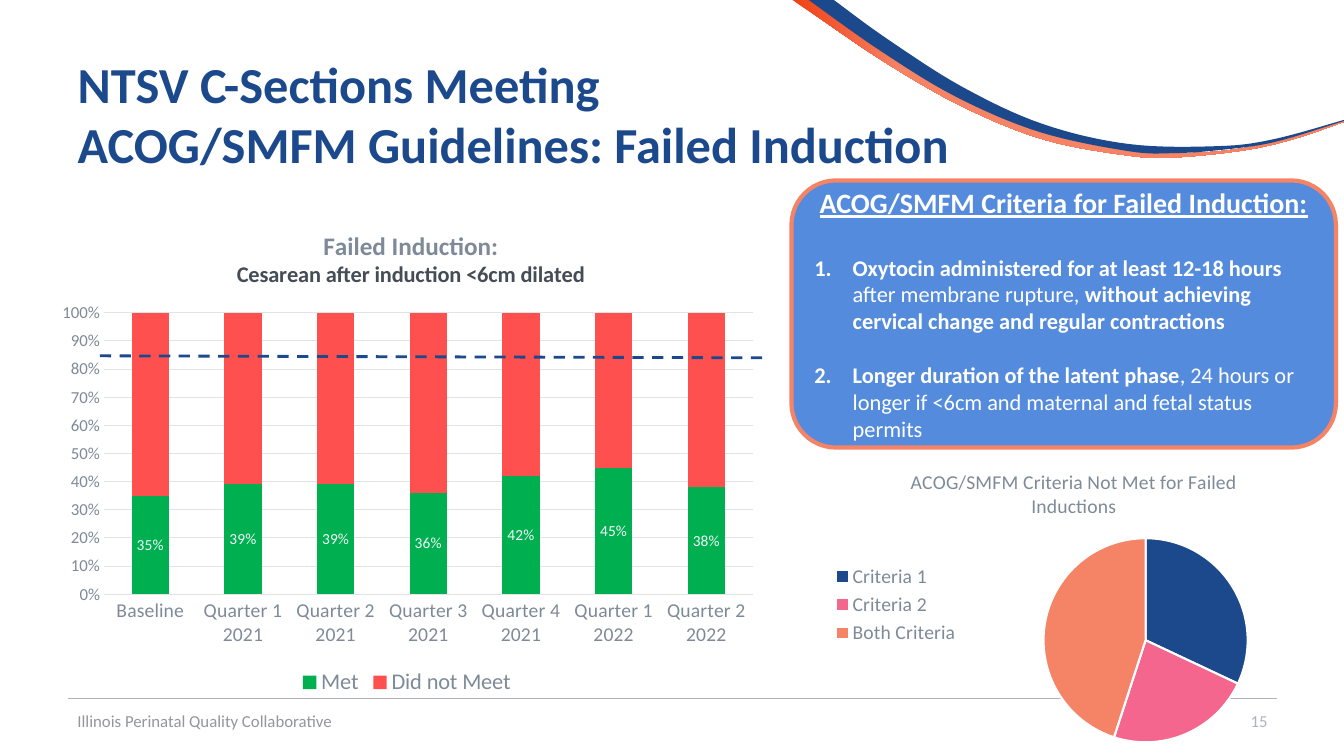
"""Build the failed induction guideline slide."""
from dataclasses import dataclass
from typing import Any, NamedTuple, Optional

from lxml import etree
from pptx import Presentation
from pptx import util as u
from pptx.chart import data as chart_data
from pptx.dml.color import RGBColor
from pptx.enum import chart as ch, dml, shapes, text
from pptx.oxml import ns


@dataclass(frozen=True)
class Theme:
    """Colours and type sizes of the slide."""
    font: str = "Calibri"
    navy: str = "1C498B"
    coral: str = "F58366"
    flame: str = "F04115"
    pink: str = "F5668F"
    card: str = "548BDC"
    green: str = "00B050"
    red: str = "FF5050"
    white: str = "FFFFFF"
    label: str = "F3F6FB"
    dark: str = "444C55"
    grey: str = "7E8A98"
    grid: str = "E1E4E7"
    rule: str = "AFB3B9"
    footer: str = "949699"
    title: int = 36
    heading: int = 20
    chart_title: int = 18
    body: int = 16
    axis: int = 14
    small: int = 12
    data: int = 11


THEME = Theme()


class Style(NamedTuple):
    """Format of a piece of text."""
    size: int
    color: str
    bold: bool = False
    underline: bool = False


class Box(NamedTuple):
    """Left, top, width and height in inches."""
    left: float
    top: float
    width: float
    height: float


class Ribbon(NamedTuple):
    """Outline of a swoosh as knots of its upper and lower edge."""
    upper: list[tuple[float, float]]
    lower: list[tuple[float, float]]
    stops: list[tuple[float, str]]


class Rule(NamedTuple):
    """Straight line between two points."""
    start: tuple[float, float]
    end: tuple[float, float]
    color: str
    width: float
    dash: Optional[dml.MSO_LINE]


class Note(NamedTuple):
    """Small text at the foot of the slide."""
    box: Box
    words: str
    color: str
    align: text.PP_ALIGN


class Paragraph(NamedTuple):
    """Runs of a card paragraph, each with its boldness."""
    runs: list[tuple[str, bool]]
    space_before: float


RIBBONS = [
    Ribbon([(8.05, 0), (8.82, .54), (9.58, .99), (10.39, 1.33), (11.25, 1.5), (11.79, 1.52),
            (12.34, 1.47), (12.83, 1.36), (13.33, 1.2)],
           [(13.33, 1.21), (12.83, 1.38), (12.35, 1.49), (11.69, 1.56), (11.24, 1.55),
            (10.37, 1.39), (9.55, 1.06), (8.78, .62), (8.04, .12), (7.86, 0)],
           [(0, THEME.flame), (.2, THEME.coral)]),
    Ribbon([(8.27, 0), (8.79, .38), (9.54, .86), (10.34, 1.23), (11.2, 1.43), (12.09, 1.45),
            (12.64, 1.38), (13.33, 1.19)],
           [(13.33, 1.2), (12.64, 1.41), (12.09, 1.49), (11.64, 1.52), (11.19, 1.5),
            (10.31, 1.31), (9.48, .96), (8.71, .49), (8.02, 0)],
           [(0, THEME.navy)]),
]
FOOTER_RULE = Rule((.67, 6.93), (12.67, 6.93), THEME.rule, .5, None)
GOAL_RULE = Rule((.99, 3.53), (7.61, 3.55), THEME.navy, 2, dml.MSO_LINE.DASH)
NOTES = [
    Note(Box(9.67, 6.95, 3, .4), "15", THEME.rule, text.PP_ALIGN.RIGHT),
    Note(Box(.67, 6.95, 4.5, .4), "Illinois Perinatal Quality Collaborative", THEME.footer,
         text.PP_ALIGN.LEFT),
]
CRITERIA = [
    Paragraph([("Oxytocin administered for at least 12-18 hours ", True),
               ("after membrane rupture, ", False),
               ("without achieving cervical change and regular contractions", True)], 24.4),
    Paragraph([("Longer duration of the latent phase", True),
               (", 24 hours or longer if <6cm and maternal and fetal status permits", False)], 19.5),
]
QUARTERS = ["Baseline", "Quarter 1 2021", "Quarter 2 2021", "Quarter 3 2021", "Quarter 4 2021",
            "Quarter 1 2022", "Quarter 2 2022"]
MET = [.35, .39, .39, .36, .42, .45, .38]
NOT_MET = {"Criteria 1": 32, "Criteria 2": 23, "Both Criteria": 45}


def assign(target: Any, **values: Any) -> None:
    """Set attributes from format values."""
    for name, value in values.items():
        setattr(target, name, value)


def paint(fill: Any, color: str) -> None:
    """Give a fill one solid colour."""
    fill.solid()
    fill.fore_color.rgb = RGBColor.from_string(color)


def style_font(font: Any, style: Style) -> None:
    """Apply a text style to a font."""
    assign(font, name=THEME.font, size=u.Pt(style.size), bold=style.bold,
           underline=style.underline)
    font.color.rgb = RGBColor.from_string(style.color)


def add_run(paragraph: Any, words: str, style: Style) -> None:
    """Append styled words to a paragraph."""
    run = paragraph.add_run()
    run.text = words
    style_font(run.font, style)


def inches(values: tuple[float, ...]) -> list[u.Length]:
    """Turn numbers into lengths."""
    return [u.Inches(value) for value in values]


def smooth(knots: list[tuple[float, float]], steps: int = 8) -> list[tuple[float, float]]:
    """Sample a Catmull-Rom curve through the knots."""
    padded = [knots[0], *knots, knots[-1]]
    points = [knots[0]]
    for a, b, c, d in zip(padded, padded[1:], padded[2:], padded[3:]):
        for t in (step / steps for step in range(1, steps + 1)):
            points.append(tuple(
                (2 * q + (r - p) * t + (2 * p - 5 * q + 4 * r - s) * t ** 2
                 + (3 * q - p - 3 * r + s) * t ** 3) / 2 for p, q, r, s in zip(a, b, c, d)))
    return points


def add_ribbon(slide: Any, ribbon: Ribbon) -> None:
    """Draw a swoosh in the top right corner."""
    start, *points = [inches(point) for point in smooth(ribbon.upper) + smooth(ribbon.lower)]
    builder = slide.shapes.build_freeform(*start)
    builder.add_line_segments(points, close=True)
    shape = builder.convert_to_shape()
    shape.shadow.inherit = False
    shape.line.fill.background()
    if len(ribbon.stops) == 1:
        paint(shape.fill, ribbon.stops[0][1])
        return
    shape.fill.gradient()
    shape.fill.gradient_angle = 0
    for stop, (position, color) in zip(shape.fill.gradient_stops, ribbon.stops):
        stop.position = position
        stop.color.rgb = RGBColor.from_string(color)


def add_rule(slide: Any, rule: Rule) -> None:
    """Draw a straight line."""
    line = slide.shapes.add_connector(shapes.MSO_CONNECTOR.STRAIGHT,
                                      *inches(rule.start + rule.end))
    paint(line.line.fill, rule.color)
    assign(line.line, width=u.Pt(rule.width), dash_style=rule.dash)
    etree.SubElement(line._element.spPr, ns.qn("a:effectLst"))


def add_note(slide: Any, note: Note) -> None:
    """Write a footer text."""
    frame = slide.shapes.add_textbox(*inches(note.box)).text_frame
    assign(frame, word_wrap=True, vertical_anchor=text.MSO_ANCHOR.MIDDLE)
    frame.paragraphs[0].alignment = note.align
    add_run(frame.paragraphs[0], note.words, Style(THEME.small, note.color))


def add_title(slide: Any) -> None:
    """Place and fill the title."""
    title = slide.shapes.title
    assign(title, **dict(zip(Box._fields, inches(Box(.67, .4, 12, 1.45)))))
    frame = title.text_frame
    assign(frame, word_wrap=True, auto_size=text.MSO_AUTO_SIZE.NONE,
           vertical_anchor=text.MSO_ANCHOR.MIDDLE)
    paragraph = frame.paragraphs[0]
    paragraph.alignment = text.PP_ALIGN.LEFT
    style = Style(THEME.title, THEME.navy, True)
    add_run(paragraph, "NTSV C-Sections Meeting", style)
    paragraph.add_line_break()
    add_run(paragraph, "ACOG/SMFM Guidelines: Failed Induction", style)


def add_card(slide: Any) -> None:
    """Draw the criteria card with its numbered list."""
    card = slide.shapes.add_shape(shapes.MSO_SHAPE.ROUNDED_RECTANGLE,
                                  *inches(Box(7.85, 1.79, 5.4, 2.65)))
    card.shadow.inherit = False
    paint(card.fill, THEME.card)
    paint(card.line.fill, THEME.coral)
    card.line.width = u.Pt(3)
    frame = card.text_frame
    assign(frame, word_wrap=True, vertical_anchor=text.MSO_ANCHOR.MIDDLE)
    frame.paragraphs[0].alignment = text.PP_ALIGN.CENTER
    add_run(frame.paragraphs[0], "ACOG/SMFM Criteria for Failed Induction:",
            Style(THEME.heading, THEME.white, True, True))
    for criterion in CRITERIA:
        paragraph = frame.add_paragraph()
        assign(paragraph, alignment=text.PP_ALIGN.LEFT, space_before=u.Pt(criterion.space_before))
        properties = paragraph._p.get_or_add_pPr()
        properties.set("marL", str(u.Inches(.38)))
        properties.set("indent", str(-u.Inches(.38)))
        etree.SubElement(properties, ns.qn("a:buFont"), typeface="+mj-lt")
        etree.SubElement(properties, ns.qn("a:buAutoNum"), type="arabicPeriod")
        for words, bold in criterion.runs:
            add_run(paragraph, words, Style(THEME.body, THEME.white, bold))


def set_layout(element: Any, inner: bool, **fractions: float) -> None:
    """Fix the place of a chart part as fractions of the chart."""
    for old in element.findall(ns.qn("c:layout")):
        element.remove(old)
    layout = etree.Element(ns.qn("c:layout"))
    element.insert(0 if inner else 1, layout)
    manual = etree.SubElement(layout, ns.qn("c:manualLayout"))
    settings = {"layoutTarget": "inner"} if inner else {}
    settings |= {"xMode": "edge", "yMode": "edge"} | fractions
    for name, value in settings.items():
        etree.SubElement(manual, ns.qn(f"c:{name}"), val=str(value))


def add_chart(slide: Any, kind: ch.XL_CHART_TYPE, box: Box, categories: list[str],
              series: dict[str, list[float]], titles: list[tuple[str, Style]],
              legend_position: ch.XL_LEGEND_POSITION, legend_size: int) -> Any:
    """Add a chart with its title and legend."""
    data = chart_data.CategoryChartData()
    data.categories = categories
    for name, values in series.items():
        data.add_series(name, values)
    chart = slide.shapes.add_chart(kind, *inches(box), data).chart
    style_font(chart.font, Style(10, THEME.dark))
    frame = chart.chart_title.text_frame
    for index, (words, style) in enumerate(titles):
        paragraph = frame.add_paragraph() if index else frame.paragraphs[0]
        paragraph.alignment = text.PP_ALIGN.CENTER
        add_run(paragraph, words, style)
    chart.has_legend = True
    assign(chart.legend, position=legend_position, include_in_layout=False)
    style_font(chart.legend.font, Style(legend_size, THEME.grey))
    return chart


def add_induction_chart(slide: Any) -> None:
    """Add the stacked columns of met and unmet criteria."""
    chart = add_chart(slide, ch.XL_CHART_TYPE.COLUMN_STACKED, Box(.46, 2.05, 7.15, 4.9), QUARTERS,
                      {"Met": MET, "Did not Meet": [round(1 - share, 2) for share in MET]},
                      [("Failed Induction:", Style(THEME.chart_title, THEME.grey, True)),
                       ("Cesarean after induction <6cm dilated",
                        Style(THEME.body, THEME.dark, True))],
                      ch.XL_LEGEND_POSITION.BOTTOM, THEME.body)
    set_layout(chart.chart_title._element, False, x=.26, y=.04)
    plot = chart.plots[0]
    set_layout(chart._chartSpace.chart.plotArea, True, x=.08, y=.215, w=.9, h=.57)
    assign(plot, gap_width=150, overlap=100)
    for series, color in zip(plot.series, (THEME.green, THEME.red)):
        paint(series.format.fill, color)
    labels = plot.series[0].data_labels
    assign(labels, show_value=True, number_format="0%", number_format_is_linked=False)
    style_font(labels.font, Style(THEME.data, THEME.label))
    for axis, size in ((chart.category_axis, THEME.axis), (chart.value_axis, THEME.small)):
        assign(axis, major_tick_mark=ch.XL_TICK_MARK.NONE, minor_tick_mark=ch.XL_TICK_MARK.NONE)
        style_font(axis.tick_labels.font, Style(size, THEME.grey))
    value_axis = chart.value_axis
    assign(value_axis, minimum_scale=0, maximum_scale=1, major_unit=.1, has_major_gridlines=True)
    assign(value_axis.tick_labels, number_format="0%", number_format_is_linked=False)
    value_axis.format.line.fill.background()
    for line in (chart.category_axis.format.line, value_axis.major_gridlines.format.line):
        paint(line.fill, THEME.grid)
        line.width = u.Pt(.75)


def add_criteria_pie(slide: Any) -> None:
    """Add the pie of unmet criteria."""
    chart = add_chart(slide, ch.XL_CHART_TYPE.PIE, Box(8.15, 4.5, 5, 3), list(NOT_MET),
                      {"Series 1": list(NOT_MET.values())},
                      [("ACOG/SMFM Criteria Not Met for Failed Inductions",
                        Style(THEME.axis, THEME.grey))],
                      ch.XL_LEGEND_POSITION.LEFT, THEME.axis)
    set_layout(chart._chartSpace.chart.plotArea, True, x=.44, y=.28, w=.405, h=.675)
    plot = chart.plots[0]
    plot.vary_by_categories = True
    for index, color in enumerate((THEME.navy, THEME.pink, THEME.coral)):
        point = plot.series[0].points[index].format
        paint(point.fill, color)
        paint(point.line.fill, THEME.white)
        point.line.width = u.Pt(1.5)


def main() -> None:
    """Build and save the presentation."""
    presentation = Presentation()
    assign(presentation, slide_width=u.Inches(13.33), slide_height=u.Inches(7.5))
    slide = presentation.slides.add_slide(presentation.slide_layouts[5])
    for ribbon in RIBBONS:
        add_ribbon(slide, ribbon)
    add_rule(slide, FOOTER_RULE)
    add_induction_chart(slide)
    add_title(slide)
    for note in NOTES:
        add_note(slide, note)
    add_card(slide)
    add_rule(slide, GOAL_RULE)
    add_criteria_pie(slide)
    presentation.save("out.pptx")


if __name__ == "__main__":
    main()
